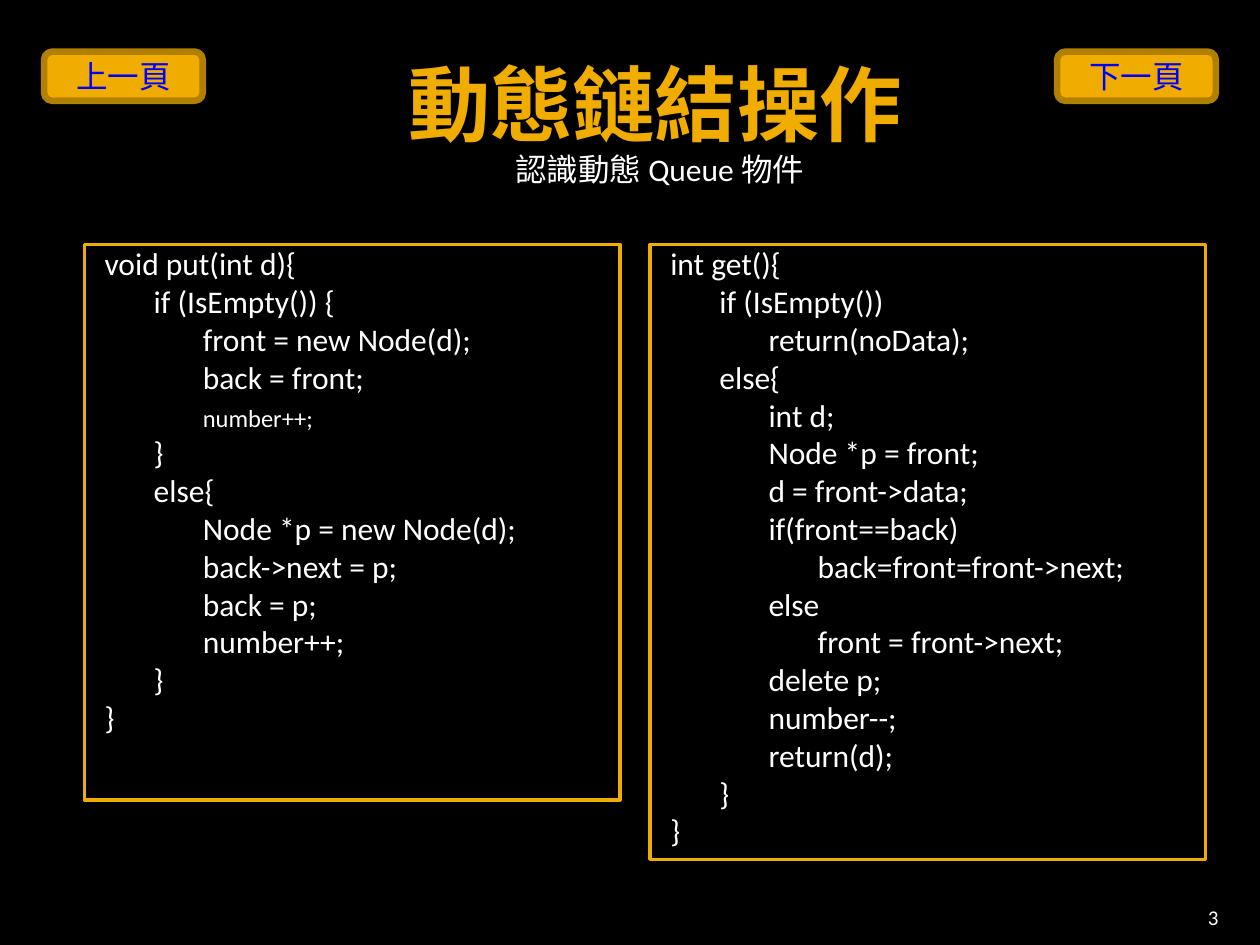
from dataclasses import dataclass

from lxml.etree import SubElement
from pptx import Presentation
from pptx.dml.color import RGBColor
from pptx.enum.shapes import MSO_SHAPE
from pptx.enum.text import MSO_ANCHOR, PP_ALIGN
from pptx.oxml.ns import qn
from pptx.util import Inches, Pt


@dataclass(frozen=True)
class Theme:
    back: str = "000000"
    gold: str = "F0AD00"
    edge: str = "B28000"
    white: str = "FFFFFF"
    link: str = "0000FF"
    font: str = "Calibri"
    cjk: str = "Noto Sans CJK SC"
    head: float = 47
    body: float = 18
    small: float = 14
    page: float = 12
    tab: float = 0.39


THEME = Theme()

PUT = """void put(int d){
\tif (IsEmpty()) {
\t\tfront = new Node(d);
\t\tback = front;
\t\tnumber++;
\t}
\telse{
\t\tNode *p = new Node(d);
\t\tback->next = p;
\t\tback = p;
\t\tnumber++;
\t}
}"""
SMALL_LINE = 4

GET = """int get(){
\tif (IsEmpty())
\t\treturn(noData);
\telse{
\t\tint d;
\t\tNode *p = front;
\t\td = front->data;
\t\tif(front==back)
\t\t\tback=front=front->next;
\t\telse
\t\t\tfront = front->next;
\t\tdelete p;
\t\tnumber--;
\t\treturn(d);
\t}
}"""


def color(code):
    return RGBColor.from_string(code)


def add_run(para, text, size=THEME.body, font=THEME.font,
            ink=THEME.white, bold=False):
    run = para.add_run()
    run.text = text
    run.font.size = Pt(size)
    run.font.name = font
    run.font.bold = bold
    run.font.color.rgb = color(ink)


def set_frame(shape, anchor=MSO_ANCHOR.TOP, pad=(0.1, 0.05, 0.1, 0.05)):
    frame = shape.text_frame
    frame.word_wrap = True
    frame.vertical_anchor = anchor
    (frame.margin_left, frame.margin_top,
     frame.margin_right, frame.margin_bottom) = map(Inches, pad)
    return frame


def add_label(slide, text, place, align=PP_ALIGN.CENTER,
              anchor=MSO_ANCHOR.TOP, pad=(0.1, 0.05, 0.1, 0.05), **style):
    box = slide.shapes.add_textbox(*map(Inches, place))
    para = set_frame(box, anchor, pad).paragraphs[0]
    para.alignment = align
    add_run(para, text, **style)


def add_box(slide, kind, place, line, width, fill=None):
    box = slide.shapes.add_shape(kind, *map(Inches, place))
    box.shadow.inherit = False
    box.line.color.rgb = color(line)
    box.line.width = Pt(width)
    if fill:
        box.fill.solid()
        box.fill.fore_color.rgb = color(fill)
    else:
        box.fill.background()
    return box


def add_tabs(para, count=3):
    """Give a code line evenly spaced tab stops."""
    tabs = SubElement(para._p.get_or_add_pPr(), qn("a:tabLst"))
    for stop in range(1, count + 1):
        SubElement(tabs, qn("a:tab"), pos=str(Inches(THEME.tab * stop)), algn="l")


def add_code(slide, code, place, small=None):
    """Draw a framed listing; the line numbered small is set in smaller type."""
    box = add_box(slide, MSO_SHAPE.RECTANGLE, place, THEME.gold, 2)
    frame = set_frame(box, pad=(0.16, 0, 0.05, 0))
    for row, line in enumerate(code.splitlines()):
        para = frame.add_paragraph() if row else frame.paragraphs[0]
        para.alignment = PP_ALIGN.LEFT
        add_tabs(para)
        if row == small:
            text = line.lstrip("\t")
            add_run(para, line[:-len(text)])
            add_run(para, text, size=THEME.small)
        else:
            add_run(para, line)


def add_button(slide, text, left):
    box = add_box(slide, MSO_SHAPE.ROUNDED_RECTANGLE, (left, 0.41, 1.26, 0.39),
                  THEME.edge, 3.78, THEME.gold)
    para = set_frame(box, MSO_ANCHOR.MIDDLE).paragraphs[0]
    para.alignment = PP_ALIGN.CENTER
    add_run(para, text, font=THEME.cjk, ink=THEME.link)


def main():
    deck = Presentation()
    deck.slide_width, deck.slide_height = Inches(10), Inches(7.5)
    slide = deck.slides.add_slide(deck.slide_layouts[6])
    slide.background.fill.solid()
    slide.background.fill.fore_color.rgb = color(THEME.back)

    add_label(slide, "動態鏈結操作", (0.82, 0.21, 8.76, 1),
              anchor=MSO_ANCHOR.BOTTOM, pad=(0.1, 0, 0.1, 0),
              size=THEME.head, ink=THEME.gold, bold=True)
    add_code(slide, PUT, (0.67, 1.94, 4.25, 4.41), small=SMALL_LINE)
    add_label(slide, "3", (8.97, 7.08, 0.8, 0.3), align=PP_ALIGN.RIGHT,
              anchor=MSO_ANCHOR.BOTTOM, pad=(0.1, 0.05, 0.1, 0), size=THEME.page)
    add_code(slide, GET, (5.16, 1.94, 4.41, 4.88))
    add_label(slide, "認識動態 Queue 物件", (3.98, 1.14, 2.51, 0.4))
    for text, left in (("上一頁", 0.35), ("下一頁", 8.39)):
        add_button(slide, text, left)

    deck.save("out.pptx")


if __name__ == "__main__":
    main()
